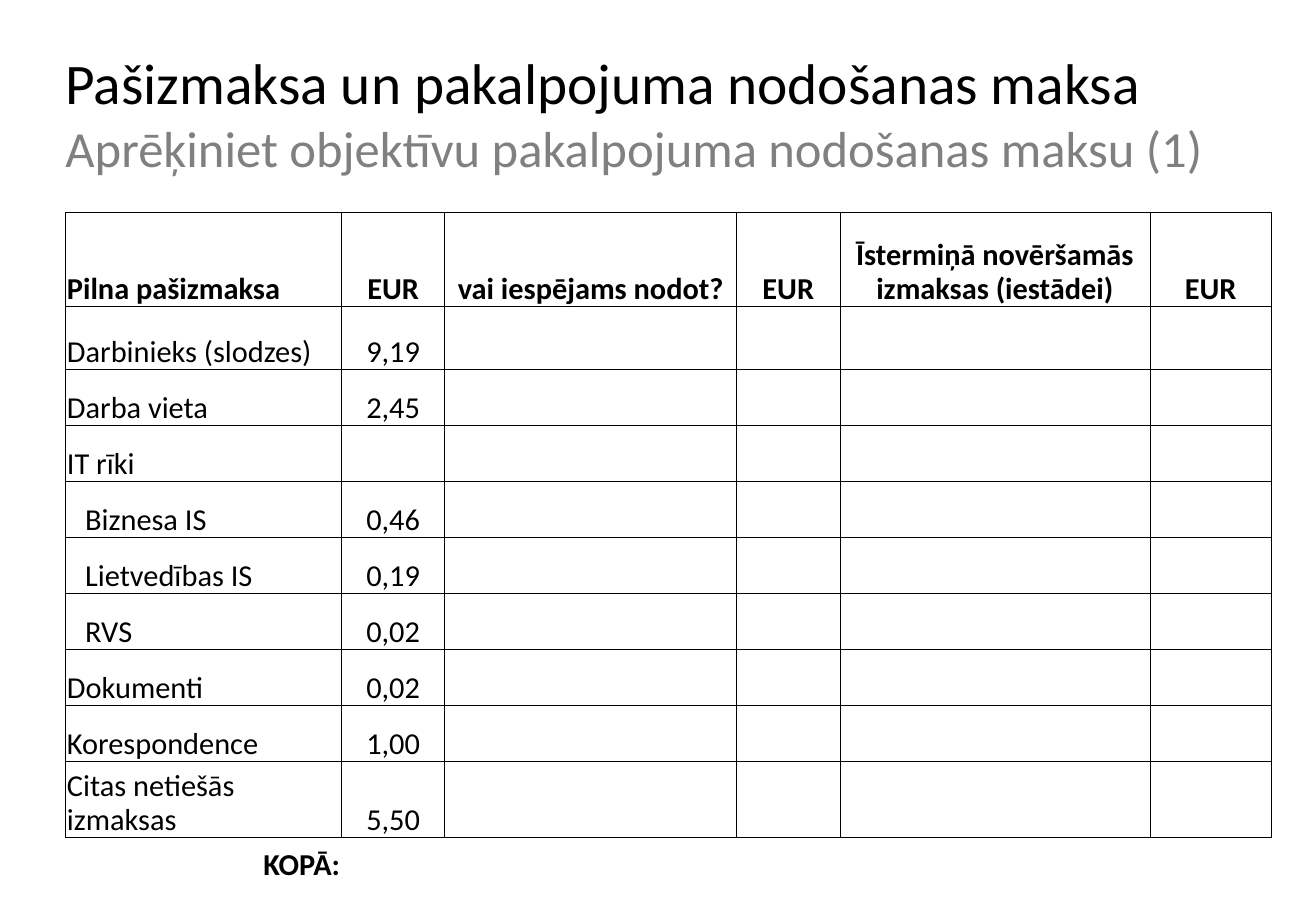
from lxml import etree
from pptx import Presentation
from pptx import util as u
from pptx.dml.color import RGBColor
from pptx.enum import text
from pptx.oxml import ns

BLACK = RGBColor(0x00, 0x00, 0x00)
GREY = RGBColor(0x80, 0x80, 0x80)
WHITE = RGBColor(0xFF, 0xFF, 0xFF)
LEFT, CENTER, RIGHT = text.PP_ALIGN.LEFT, text.PP_ALIGN.CENTER, text.PP_ALIGN.RIGHT

HEADERS = ["Pilna pašizmaksa", "EUR", "vai iespējams nodot?", "EUR",
           "Īstermiņā novēršamās izmaksas (iestādei)", "EUR"]
# Cost item, amount, is a sub-item
COSTS = [
    ("Darbinieks (slodzes)", "9,19", False),
    ("Darba vieta", "2,45", False),
    ("IT rīki", "", False),
    ("Biznesa IS", "0,46", True),
    ("Lietvedības IS", "0,19", True),
    ("RVS", "0,02", True),
    ("Dokumenti", "0,02", False),
    ("Korespondence", "1,00", False),
    ("Citas netiešās izmaksas", "5,50", False),
]
COL_WIDTHS = [5.77, 2.16, 6.1, 2.16, 6.48, 2.54]
ROW_HEIGHTS = [1.96, 1.32] + [1.17] * 7 + [1.6, 0.94]


class SlideBuilder:
    font = "Calibri"
    cell_size = 18
    line_width = u.Pt(0.5)

    def __init__(self, prs):
        self.slide = prs.slides.add_slide(prs.slide_layouts[6])

    def run(self, p, words, size, color=BLACK, bold=False):
        r = p.add_run()
        r.text = words
        r.font.name = self.font
        r.font.size = u.Pt(size)
        r.font.bold = bold
        r.font.color.rgb = color

    def title(self, x, y, w, h, lines):
        tf = self.slide.shapes.add_textbox(u.Cm(x), u.Cm(y), u.Cm(w), u.Cm(h)).text_frame
        tf.word_wrap = True
        tf.vertical_anchor = text.MSO_ANCHOR.MIDDLE
        tf.margin_left = tf.margin_right = tf.margin_top = tf.margin_bottom = 0
        p = tf.paragraphs[0]
        p.line_spacing = 1.01
        for i, (words, size, color) in enumerate(lines):
            if i:
                p.add_line_break()
            self.run(p, words, size, color)

    def table(self, x, y, widths, heights):
        frame = self.slide.shapes.add_table(
            len(heights), len(widths), u.Cm(x), u.Cm(y),
            u.Cm(sum(widths)), u.Cm(sum(heights)))
        table = frame.table
        table.first_row = table.horz_banding = False
        for column, width in zip(table.columns, widths):
            column.width = u.Cm(width)
        for row, height in zip(table.rows, heights):
            row.height = u.Cm(height)
        return table

    def borders(self, cell, sides):
        tc_pr = cell._tc.get_or_add_tcPr()
        for side in "LRTB":
            ln = etree.SubElement(tc_pr, ns.qn("a:ln" + side), w=str(self.line_width))
            if side in sides:
                fill = etree.SubElement(ln, ns.qn("a:solidFill"))
                etree.SubElement(fill, ns.qn("a:srgbClr"), val=str(BLACK))
            else:
                etree.SubElement(ln, ns.qn("a:noFill"))

    def cell(self, cell, words="", align=LEFT, bold=False, indent=0.03, sides="LRTB"):
        self.borders(cell, sides)
        cell.fill.solid()
        cell.fill.fore_color.rgb = WHITE
        cell.vertical_anchor = text.MSO_ANCHOR.BOTTOM
        cell.margin_left = u.Cm(indent)
        cell.margin_right = cell.margin_top = u.Cm(0.03)
        cell.margin_bottom = 0
        p = cell.text_frame.paragraphs[0]
        p.alignment = align
        p.line_spacing = 0.93
        if words:
            self.run(p, words, self.cell_size, bold=bold)
        else:
            p.font.size = u.Pt(self.cell_size)


def main():
    prs = Presentation()
    prs.slide_width, prs.slide_height = u.Cm(27.51), u.Cm(19.05)
    s = SlideBuilder(prs)

    # Title
    s.title(1.37, 0.76, 26.14, 3.18, [
        ("Pašizmaksa un pakalpojuma nodošanas maksa", 34, BLACK),
        ("Aprēķiniet objektīvu pakalpojuma nodošanas maksu (1)", 30, GREY),
    ])

    # Cost table: header row
    table = s.table(1.37, 4.45, COL_WIDTHS, ROW_HEIGHTS)
    for col, header in enumerate(HEADERS):
        s.cell(table.cell(0, col), header, CENTER if col else LEFT, bold=True)

    # Cost rows, with the right-hand columns left to fill in
    for row, (item, amount, is_sub) in enumerate(COSTS, start=1):
        s.cell(table.cell(row, 0), item, indent=0.41 if is_sub else 0.03)
        s.cell(table.cell(row, 1), amount, CENTER)
        for col in range(2, len(HEADERS)):
            s.cell(table.cell(row, col))

    # Total row, open below
    total = len(COSTS) + 1
    for col in range(len(HEADERS)):
        s.cell(table.cell(total, col), "" if col else "KOPĀ:", RIGHT, bold=True, sides="T")

    prs.save("out.pptx")


if __name__ == "__main__":
    main()
